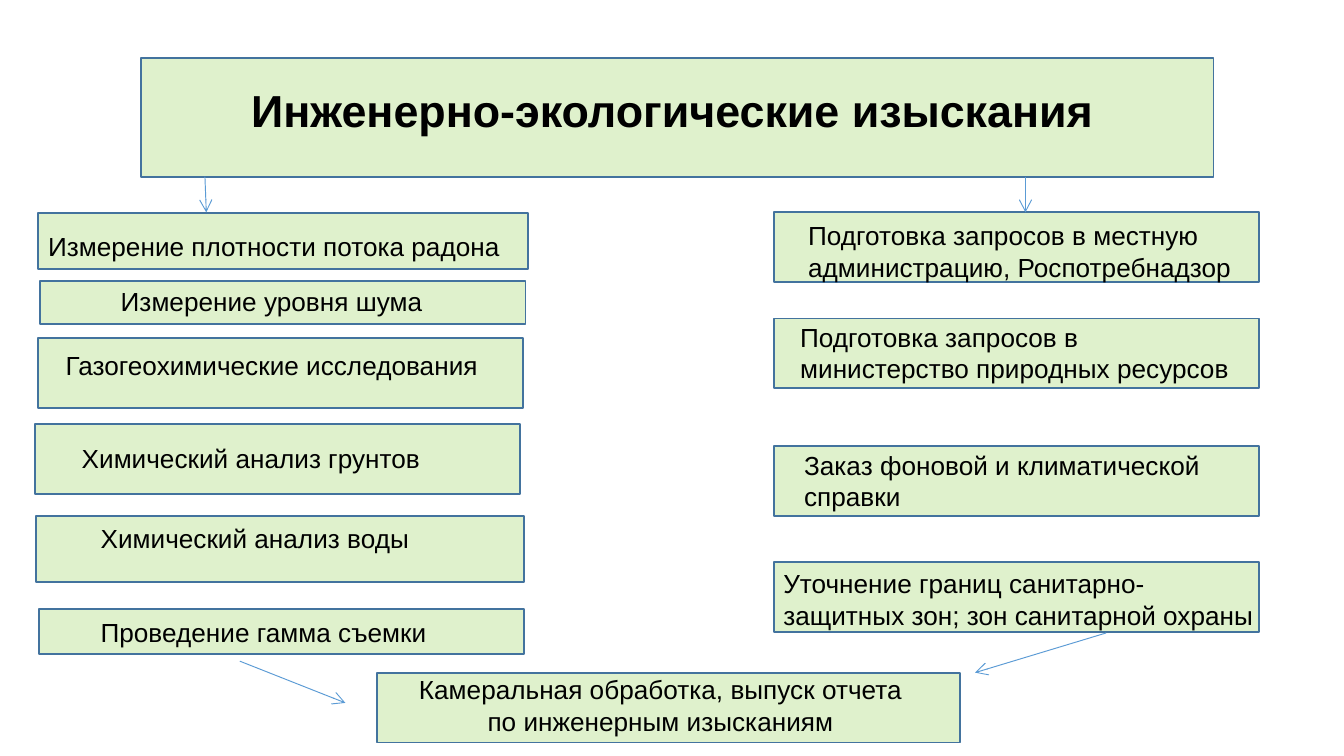
from lxml.etree import SubElement
from pptx import Presentation
from pptx.dml.color import RGBColor
from pptx.enum.shapes import MSO_CONNECTOR, MSO_SHAPE
from pptx.enum.text import MSO_ANCHOR, MSO_AUTO_SIZE, PP_ALIGN
from pptx.oxml.ns import qn
from pptx.util import Pt

SCALE = 4572
GREEN, EDGE, BLUE, BLACK = "92D050", "43739E", "5B9BD5", "000000"

HEAD = (210, 86, 1596, 177)
STEPS = [
    ((56, 317, 730, 84), (52, 333, 726, 68), "Измерение плотности потока радона"),
    ((60, 418, 722, 64), (160, 415, 614, 68), "Измерение уровня шума"),
    ((56, 503, 722, 104), (78, 510, 690, 68), "Газогеохимические исследования"),
    ((52, 631, 722, 104), (102, 649, 728, 68), "Химический анализ грунтов"),
    ((54, 768, 726, 98), (130, 768, 610, 68), "Химический анализ воды"),
    ((58, 906, 722, 68), (130, 908, 622, 68), "Проведение гамма съемки"),
    ((1152, 316, 722, 104), (1183, 317, 672, 114),
     "Подготовка запросов в местную администрацию, Роспотребнадзор"),
    ((1152, 474, 722, 104), (1171, 468, 684, 114),
     "Подготовка запросов в министерство природных ресурсов"),
    ((1152, 664, 722, 104), (1177, 659, 672, 114),
     "Заказ фоновой и климатической справки"),
    ((1152, 836, 722, 104), (1146, 835, 746, 114),
     "Уточнение границ санитарно-защитных зон; зон санитарной охраны"),
]
REPORT = ((561, 1001, 868, 104), (602, 993, 762, 114),
          "Камеральная обработка, выпуск отчета по инженерным изысканиям")
ARROWS = [
    (305, 263, 307, 316),
    (1526, 263, 1526, 316),
    (357, 984, 514, 1046),
    (1646, 942, 1451, 1001),
]


def px(*nums):
    return [num * SCALE for num in nums]


def color(code):
    return RGBColor.from_string(code)


def style(frame, text, size, align, bold=False):
    frame.text = text
    frame.word_wrap = True
    para = frame.paragraphs[0]
    para.alignment = align
    font = para.runs[0].font
    font.name = "Arial"
    font.size = Pt(size)
    font.bold = bold
    font.color.rgb = color(BLACK)


def add_box(slide, area):
    box = slide.shapes.add_shape(MSO_SHAPE.RECTANGLE, *px(*area))
    box.shadow.inherit = False
    box.fill.solid()
    box.fill.fore_color.rgb = color(GREEN)
    tint = next(box.element.spPr.iter(qn("a:srgbClr")))
    SubElement(tint, qn("a:alpha"), val="29000")
    box.line.color.rgb = color(EDGE)
    box.line.width = Pt(1)
    return box


def add_label(slide, area, text, align=PP_ALIGN.LEFT):
    frame = slide.shapes.add_textbox(*px(*area)).text_frame
    style(frame, text, 14, align)
    frame.auto_size = MSO_AUTO_SIZE.SHAPE_TO_FIT_TEXT


def add_arrow(slide, ends):
    arrow = slide.shapes.add_connector(MSO_CONNECTOR.STRAIGHT, *px(*ends))
    arrow.line.color.rgb = color(BLUE)
    arrow.line.width = Pt(0.5)
    edge = arrow.element.spPr.find(qn("a:ln"))
    SubElement(edge, qn("a:tailEnd"), type="arrow")
    SubElement(arrow.element.spPr, qn("a:effectLst"))


def add_title(slide):
    title = slide.shapes.title
    add_box(slide, HEAD).element.addnext(title.element)
    title.left, title.top, title.width, title.height = px(138, 59, 1724, 218)
    frame = title.text_frame
    style(frame, "Инженерно-экологические изыскания", 24, PP_ALIGN.CENTER, True)
    frame.auto_size = MSO_AUTO_SIZE.NONE
    frame.vertical_anchor = MSO_ANCHOR.MIDDLE
    frame.margin_left, frame.margin_right = px(14, 14)
    frame.margin_top, frame.margin_bottom = px(8, 8)
    frame.paragraphs[0].line_spacing = 0.9


def main():
    deck = Presentation()
    deck.slide_width, deck.slide_height = px(2000, 1125)
    slide = deck.slides.add_slide(deck.slide_layouts[5])
    add_title(slide)
    for box, area, text in STEPS:
        add_box(slide, box)
        add_label(slide, area, text)
    box, area, text = REPORT
    add_box(slide, box)
    add_label(slide, area, text, PP_ALIGN.CENTER)
    for ends in ARROWS:
        add_arrow(slide, ends)
    deck.save("out.pptx")


if __name__ == "__main__":
    main()
